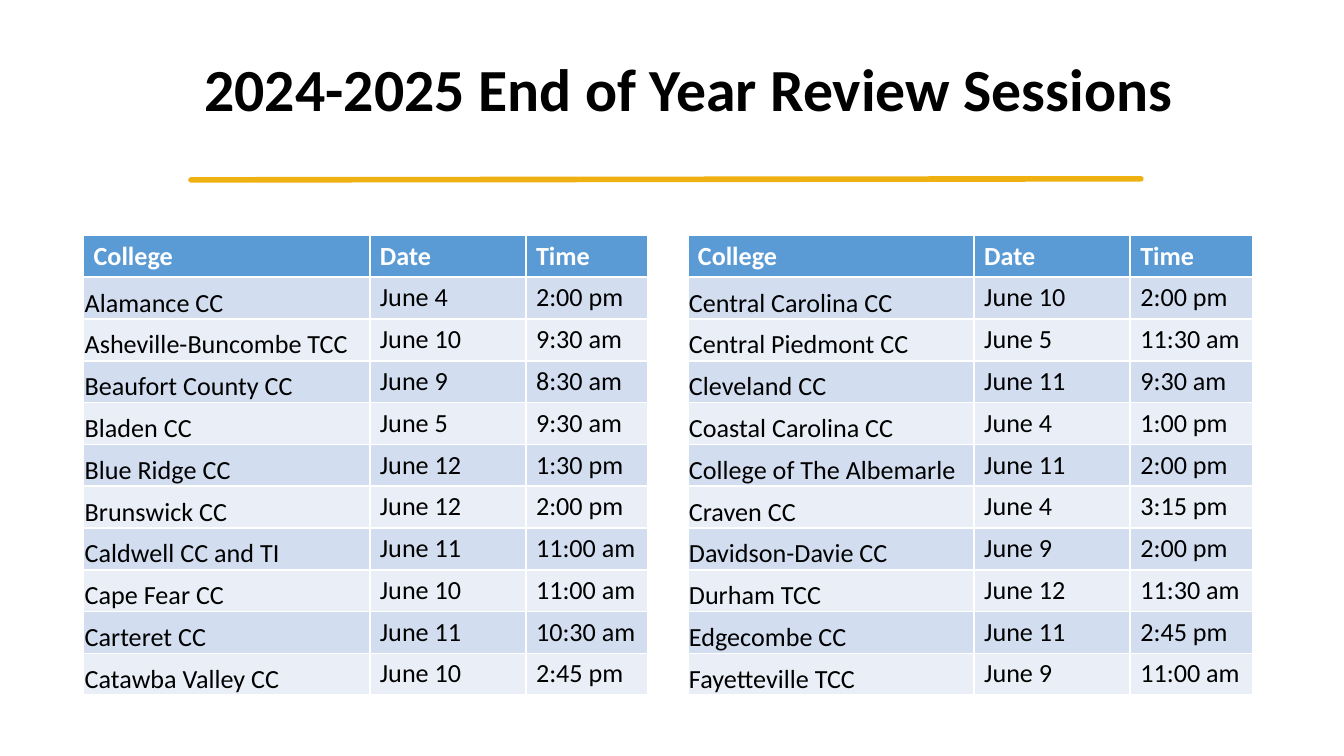
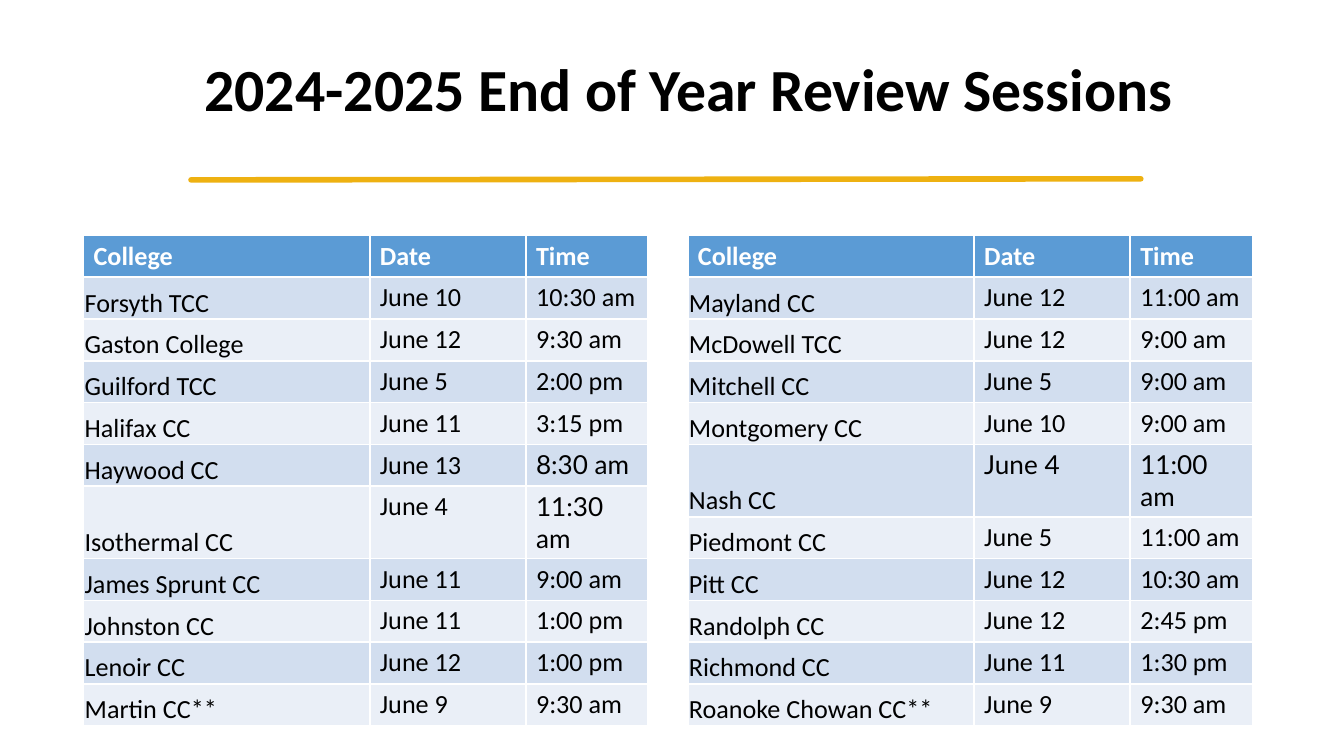
from lxml.etree import SubElement
from pptx import Presentation
from pptx.dml.color import RGBColor
from pptx.enum.shapes import MSO_CONNECTOR
from pptx.enum.text import MSO_ANCHOR, MSO_AUTO_SIZE, PP_ALIGN
from pptx.oxml.ns import qn
from pptx.util import Cm, Pt

BLACK = RGBColor(0x00, 0x00, 0x00)
WHITE = RGBColor(0xFF, 0xFF, 0xFF)
GOLD = RGBColor(0xEE, 0xB1, 0x11)
HEADER_BLUE = RGBColor(0x5B, 0x9B, 0xD5)
BAND_DARK = RGBColor(0xD2, 0xDE, 0xEF)
BAND_LIGHT = RGBColor(0xEA, 0xEF, 0xF7)

FONT = "Calibri"
ACCENT_FONT = "Lato"
TITLE = "2024-2025 End of Year Review Sessions"
HEADER = ("College", "Date", "Time")
COLUMN_WIDTHS = (5.41, 2.95, 2.31)
ROW_HEIGHT = 0.79
TABLE_TOP = 4.45
TABLE_LEFTS = (1.58, 13.0)
TITLE_ONLY_LAYOUT = 5

ACCENT_CELLS = {
    ("Haywood CC", 2),
    ("Isothermal CC", 2),
    ("Nash CC", 1),
    ("Nash CC", 2),
}

ALAMANCE_TO_CATAWBA = [
    ("Alamance CC", "June 4", "2:00 pm"),
    ("Asheville-Buncombe TCC", "June 10", "9:30 am"),
    ("Beaufort County CC", "June 9", "8:30 am"),
    ("Bladen CC", "June 5", "9:30 am"),
    ("Blue Ridge CC", "June 12", "1:30 pm"),
    ("Brunswick CC", "June 12", "2:00 pm"),
    ("Caldwell CC and TI", "June 11", "11:00 am"),
    ("Cape Fear CC", "June 10", "11:00 am"),
    ("Carteret CC", "June 11", "10:30 am"),
    ("Catawba Valley CC", "June 10", "2:45 pm"),
]
CENTRAL_TO_FAYETTEVILLE = [
    ("Central Carolina CC", "June 10", "2:00 pm"),
    ("Central Piedmont CC", "June 5", "11:30 am"),
    ("Cleveland CC", "June 11", "9:30 am"),
    ("Coastal Carolina CC", "June 4", "1:00 pm"),
    ("College of The Albemarle", "June 11", "2:00 pm"),
    ("Craven CC", "June 4", "3:15 pm"),
    ("Davidson-Davie CC", "June 9", "2:00 pm"),
    ("Durham TCC", "June 12", "11:30 am"),
    ("Edgecombe CC", "June 11", "2:45 pm"),
    ("Fayetteville TCC", "June 9", "11:00 am"),
]
FORSYTH_TO_MARTIN = [
    ("Forsyth TCC", "June 10", "10:30 am"),
    ("Gaston College", "June 12", "9:30 am"),
    ("Guilford TCC", "June 5", "2:00 pm"),
    ("Halifax CC", "June 11", "3:15 pm"),
    ("Haywood CC", "June 13", "8:30 am"),
    ("Isothermal CC", "June 4", "11:30 am"),
    ("James Sprunt CC", "June 11", "9:00 am"),
    ("Johnston CC", "June 11", "1:00 pm"),
    ("Lenoir CC", "June 12", "1:00 pm"),
    ("Martin CC**", "June 9", "9:30 am"),
]
MAYLAND_TO_ROANOKE = [
    ("Mayland CC", "June 12", "11:00 am"),
    ("McDowell TCC", "June 12", "9:00 am"),
    ("Mitchell CC", "June 5", "9:00 am"),
    ("Montgomery CC", "June 10", "9:00 am"),
    ("Nash CC", "June 4", "11:00 am"),
    ("Piedmont CC", "June 5", "11:00 am"),
    ("Pitt CC", "June 12", "10:30 am"),
    ("Randolph CC", "June 12", "2:45 pm"),
    ("Richmond CC", "June 11", "1:30 pm"),
    ("Roanoke Chowan CC**", "June 9", "9:30 am"),
]


class SessionDeck:
    def __init__(self):
        self.presentation = Presentation()
        self.presentation.slide_width = Cm(25.4)
        self.presentation.slide_height = Cm(14.29)
        self.slide = None

    def add_slide(self, title_width):
        layout = self.presentation.slide_layouts[TITLE_ONLY_LAYOUT]
        self.slide = self.presentation.slides.add_slide(layout)
        self.add_title(title_width)
        self.add_rule()

    def format_runs(self, paragraph, size, color, bold, font=FONT):
        for run in paragraph.runs:
            run.font.name = font
            run.font.size = Pt(size)
            run.font.bold = bold
            run.font.color.rgb = color

    def add_title(self, width):
        title = self.slide.shapes.title
        title.left, title.top = Cm(3.61), Cm(0.36)
        title.width, title.height = Cm(width), Cm(2.77)
        text_frame = title.text_frame
        text_frame.text = TITLE
        text_frame.word_wrap = True
        text_frame.auto_size = MSO_AUTO_SIZE.NONE
        text_frame.vertical_anchor = MSO_ANCHOR.MIDDLE
        paragraph = text_frame.paragraphs[0]
        paragraph.alignment = PP_ALIGN.LEFT
        paragraph.line_spacing = 0.9
        self.format_runs(paragraph, 32, BLACK, True)

    def add_rule(self):
        rule = self.slide.shapes.add_connector(
            MSO_CONNECTOR.STRAIGHT, Cm(3.61), Cm(3.4), Cm(21.56), Cm(3.38)
        )
        rule.line.color.rgb = GOLD
        rule.line.width = Pt(3)
        properties = rule._element.spPr
        properties.find(qn("a:ln")).set("cap", "rnd")
        SubElement(properties, qn("a:effectLst"))

    def add_session_table(self, left, sessions):
        rows = [HEADER, *sessions]
        table = self.slide.shapes.add_table(
            len(rows), len(HEADER), Cm(left), Cm(TABLE_TOP),
            Cm(sum(COLUMN_WIDTHS)), Cm(ROW_HEIGHT * len(rows)),
        ).table
        for column, width in zip(table.columns, COLUMN_WIDTHS):
            column.width = Cm(width)
        for row_index, values in enumerate(rows):
            table.rows[row_index].height = Cm(ROW_HEIGHT)
            for column_index, value in enumerate(values):
                cell = table.cell(row_index, column_index)
                cell.text_frame.text = value
                accented = (values[0], column_index) in ACCENT_CELLS
                self.format_cell(cell, row_index, column_index,
                                 ACCENT_FONT if accented else FONT)

    def format_cell(self, cell, row_index, column_index, font):
        is_header = row_index == 0
        if column_index == 0 and not is_header:
            cell.vertical_anchor = MSO_ANCHOR.BOTTOM
            cell.margin_left = cell.margin_right = cell.margin_top = Cm(0.02)
            cell.margin_bottom = Cm(0)
        else:
            cell.margin_left = cell.margin_right = Cm(0.19)
            cell.margin_top = cell.margin_bottom = Cm(0.09)
        band = BAND_DARK if row_index % 2 else BAND_LIGHT
        cell.fill.solid()
        cell.fill.fore_color.rgb = HEADER_BLUE if is_header else band
        self.format_runs(cell.text_frame.paragraphs[0], 14,
                         WHITE if is_header else BLACK, is_header, font)


def main():
    deck = SessionDeck()
    pages = (
        (20.45, (ALAMANCE_TO_CATAWBA, CENTRAL_TO_FAYETTEVILLE)),
        (21.03, (FORSYTH_TO_MARTIN, MAYLAND_TO_ROANOKE)),
    )
    for title_width, tables in pages:
        deck.add_slide(title_width)
        for left, sessions in zip(TABLE_LEFTS, tables):
            deck.add_session_table(left, sessions)
    deck.presentation.save("out.pptx")


if __name__ == "__main__":
    main()
